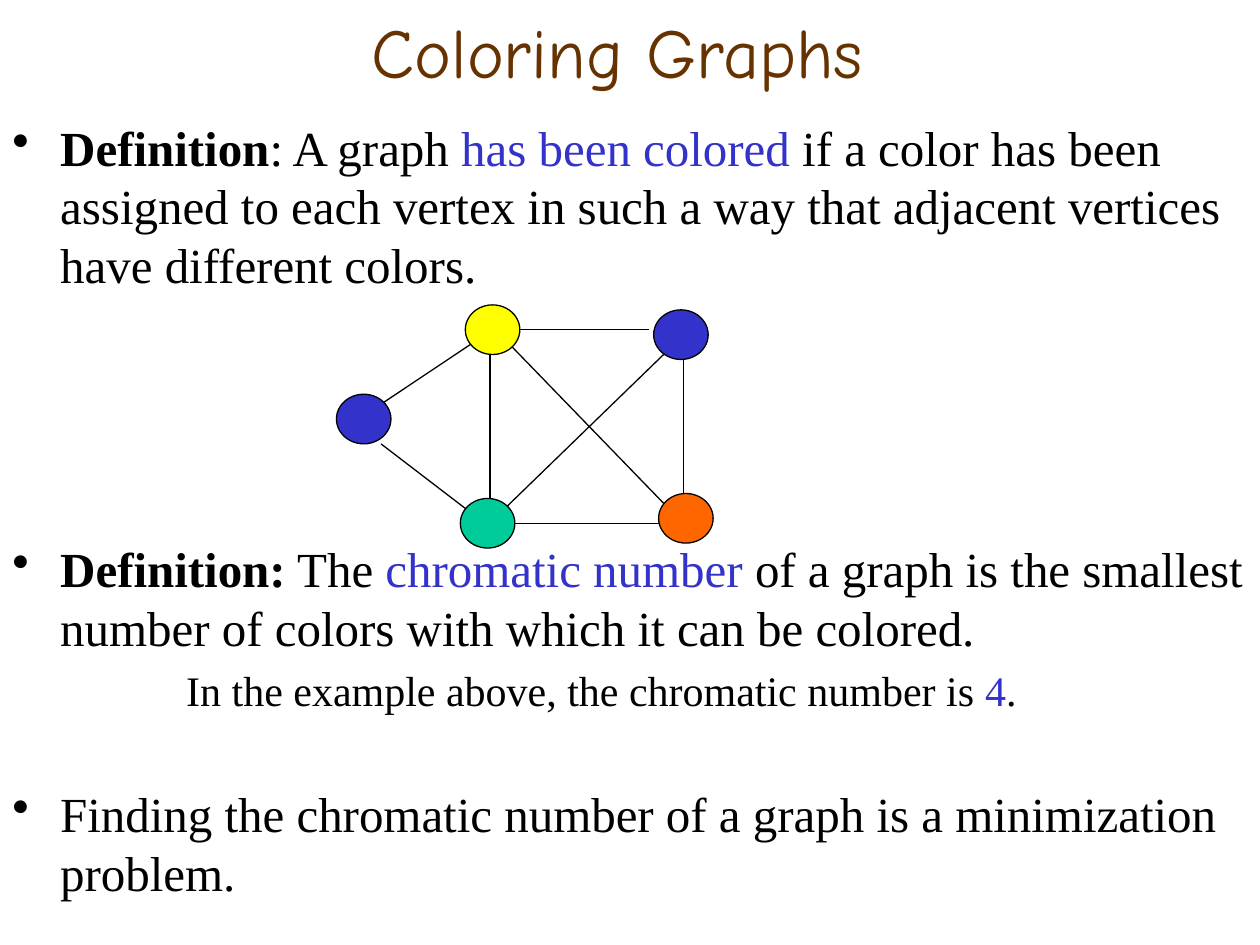
from lxml import etree
from pptx import Presentation, util as u
from pptx.dml.color import RGBColor
from pptx.enum import shapes, text
from pptx.oxml import ns

BLACK = RGBColor(0x00, 0x00, 0x00)
BROWN = RGBColor(0x66, 0x33, 0x00)
BLUE = RGBColor(0x33, 0x33, 0xCC)
YELLOW = RGBColor(0xFF, 0xFF, 0x00)
GREEN = RGBColor(0x00, 0xCC, 0x99)
ORANGE = RGBColor(0xFF, 0x66, 0x00)

TITLE_FONT, BODY_FONT = "Comic Neue", "Times New Roman"
HANGING = 0.38
EXAMPLE_INDENT = 1.38

# The graph lies on a grid of square cells: vertex (column, row, colour),
# edge (from column, from row, to column, to row).
GRID_COLUMNS, GRID_ROWS = 76, 49
VERTEX_COLUMNS, VERTEX_ROWS = 11, 10
VERTICES = [(0, 18, BLUE), (26, 0, YELLOW), (25, 39, GREEN),
            (64, 1, BLUE), (65, 38, ORANGE)]
EDGES = [(9, 20, 27, 8), (9, 28, 26, 41), (37, 5, 63, 5), (36, 44, 65, 44),
         (31, 10, 31, 39), (70, 11, 70, 38), (35, 8, 67, 41), (34, 41, 66, 10)]

# Each paragraph: size, space before, bulleted, runs of (text, colour, bold).
PARAGRAPHS = [
    (28, 5.6, True, [
        ("Definition", BLACK, True), (": A graph ", BLACK, False),
        ("has been colored", BLUE, False),
        (" if a color has been assigned to each vertex in such a way that "
         "adjacent vertices have different colors.", BLACK, False)]),
    (28, 140, True, [
        ("Definition:", BLACK, True), (" The ", BLACK, False),
        ("chromatic number", BLUE, False),
        (" of a graph is the smallest number of colors with which it can be "
         "colored.", BLACK, False)]),
    (24, 4.8, False, [
        ("In the example above, the chromatic number is ", BLACK, False),
        ("4", BLUE, False), (".", BLACK, False)]),
    (28, 39.2, True, [
        ("Finding the chromatic number of a graph is a minimization problem.",
         BLACK, False)]),
]


def add_run(paragraph, words, font_name, size, color, bold=False):
    run = paragraph.add_run()
    run.text = words
    run.font.name = font_name
    run.font.size = u.Pt(size)
    run.font.color.rgb = color
    run.font.bold = bold


def set_indent(paragraph, bulleted):
    """Give a hanging bullet, or the deeper indent of an example line."""
    properties = paragraph._p.get_or_add_pPr()
    left, first = (HANGING, -HANGING) if bulleted else (EXAMPLE_INDENT, 0)
    properties.set("marL", str(u.Inches(left)))
    properties.set("indent", str(u.Inches(first)))
    if bulleted:
        etree.SubElement(properties, ns.qn("a:buChar")).set("char", "•")


def place_title(slide, left, top, width, height):
    title = slide.shapes.title
    title.left, title.top, title.width, title.height = left, top, width, height
    title.text_frame.vertical_anchor = text.MSO_ANCHOR.MIDDLE
    paragraph = title.text_frame.paragraphs[0]
    paragraph.alignment = text.PP_ALIGN.CENTER
    add_run(paragraph, "Coloring Graphs", TITLE_FONT, 40, BROWN)


def place_definitions(slide, left, top, width, height):
    frame = slide.shapes.add_textbox(left, top, width, height).text_frame
    frame.word_wrap = True
    for index, (size, space, bulleted, runs) in enumerate(PARAGRAPHS):
        paragraph = frame.add_paragraph() if index else frame.paragraphs[0]
        paragraph.space_before = u.Pt(space)
        set_indent(paragraph, bulleted)
        for words, color, bold in runs:
            add_run(paragraph, words, BODY_FONT, size, color, bold)


def place_graph(slide, left, top, width, height):
    group = slide.shapes.add_group_shape()

    def at(column, row):
        return (left + int(width * column / GRID_COLUMNS),
                top + int(height * row / GRID_ROWS))

    def outline(shape):
        shape.line.color.rgb = BLACK
        shape.line.width = u.Pt(0.75)

    for x1, y1, x2, y2 in EDGES:
        edge = group.shapes.add_connector(
            shapes.MSO_CONNECTOR.STRAIGHT, *at(x1, y1), *at(x2, y2))
        outline(edge)
        etree.SubElement(edge._element.spPr, ns.qn("a:effectLst"))

    vertex_size = (int(width * VERTEX_COLUMNS / GRID_COLUMNS),
                   int(height * VERTEX_ROWS / GRID_ROWS))
    for column, row, color in VERTICES:
        vertex = group.shapes.add_shape(
            shapes.MSO_SHAPE.OVAL, *at(column, row), *vertex_size)
        vertex.shadow.inherit = False
        vertex.fill.solid()
        vertex.fill.fore_color.rgb = color
        outline(vertex)


def main():
    presentation = Presentation()
    presentation.slide_width = u.Inches(10)
    presentation.slide_height = u.Inches(7.5)
    slide = presentation.slides.add_slide(presentation.slide_layouts[5])
    place_title(slide, u.Inches(0.43), 0, u.Inches(8.94), u.Inches(0.8))
    place_definitions(slide, 0, u.Inches(0.88), u.Inches(10), u.Inches(6.62))
    place_graph(slide, u.Inches(2.67), u.Inches(2.42),
                u.Inches(2.99), u.Inches(1.93))
    presentation.save("out.pptx")


if __name__ == "__main__":
    main()
